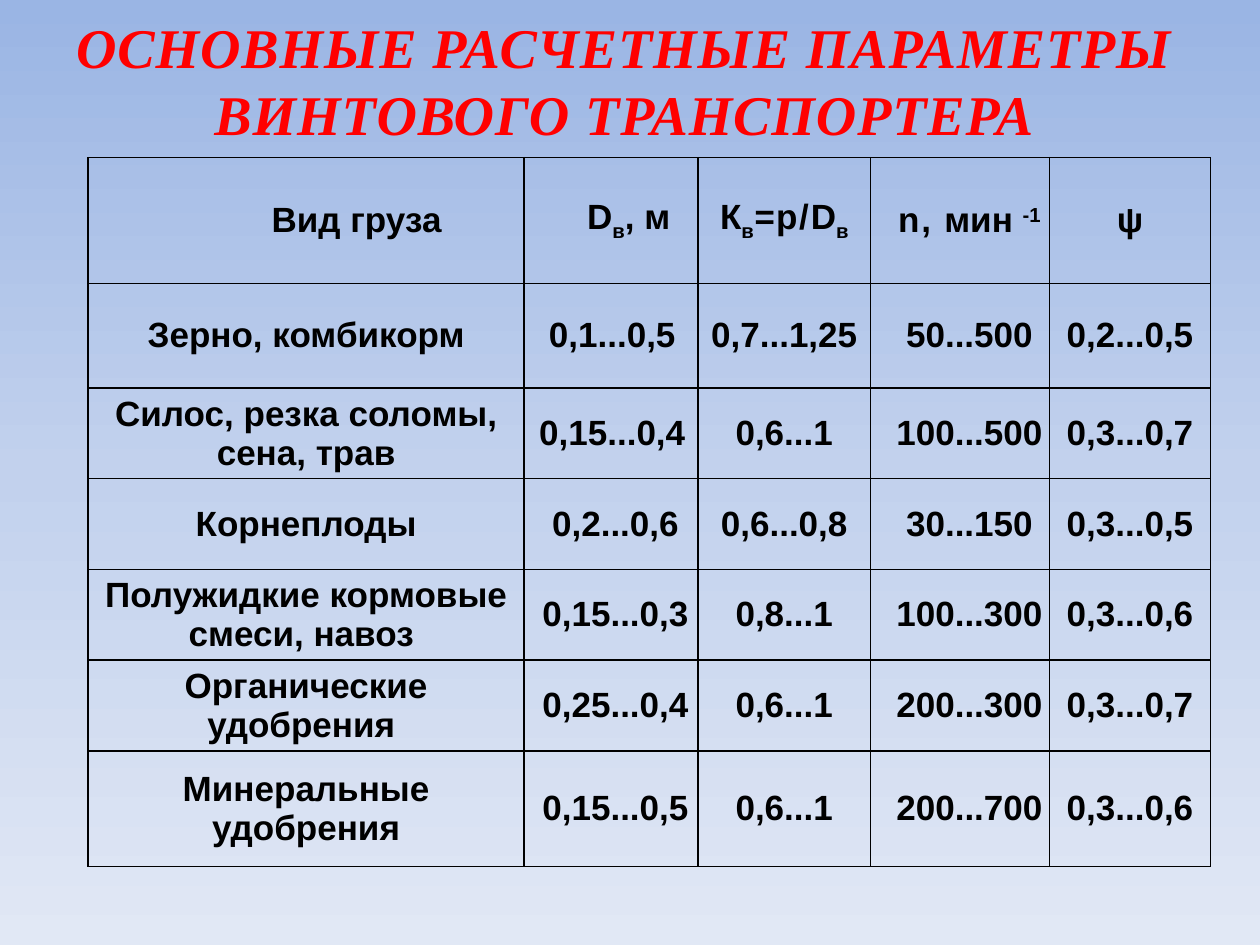
from copy import deepcopy
from dataclasses import dataclass

from lxml.etree import SubElement
from pptx import Presentation
from pptx.dml.color import RGBColor
from pptx.enum.text import MSO_ANCHOR as Anchor, MSO_AUTO_SIZE as AutoSize, PP_ALIGN as Align
from pptx.oxml.ns import qn
from pptx.util import Inches, Pt

RED = RGBColor(0xFF, 0x00, 0x00)
BLACK = RGBColor(0x00, 0x00, 0x00)
SKY = [RGBColor(0x9A, 0xB5, 0xE4), RGBColor(0xC2, 0xD1, 0xED), RGBColor(0xE1, 0xE8, 0xF5)]

TITLE_FORMAT = {"size": Pt(32), "name": "Times New Roman", "bold": True, "italic": True}
CELL_FORMAT = {"size": Pt(20), "name": "Arial", "bold": True}
CELL_MARGINS = {"margin_left": Inches(0.03), "margin_right": Inches(0.03),
                "margin_top": 0, "margin_bottom": 0}

COLUMN_WIDTHS = [3.46, 1.38, 1.37, 1.42, 1.28]
ROW_HEIGHTS = [1, 0.83, 0.72, 0.72, 0.72, 0.72, 0.92]


@dataclass
class Span:
    text: str
    baseline: int = 0  # percent: negative is a subscript
    spacing: float = 0  # points between letters
    italic: bool = False


@dataclass
class Entry:
    spans: list[Span]
    left: float = 0
    first_line: float = 0


@dataclass
class Cargo:
    name: str
    diameter: str
    pitch_ratio: str
    speed: str
    filling: str
    diameter_indent: float = 0.07

    def entries(self) -> list[Entry]:
        return [
            Entry([Span(self.name)]),
            Entry([Span(self.diameter)], first_line=self.diameter_indent),
            Entry([Span(self.pitch_ratio)]),
            Entry([Span(self.speed)], left=0.14, first_line=0.01),
            Entry([Span(self.filling)]),
        ]


HEADER = [
    Entry([Span("Вид груза")], left=0.8),
    Entry([Span("D"), Span("в", -25), Span(", м")], left=0.28),
    Entry([Span("К"), Span("в", -25), Span("=", spacing=1, italic=True),
           Span("р/", spacing=1), Span("D"), Span("в", -25)]),
    Entry([Span("n, ", spacing=1), Span("мин "), Span("-1", 30)], left=0.15),
    Entry([Span("ψ", spacing=1)]),
]
CARGOES = [
    Cargo("Зерно, комбикорм", "0,1...0,5", "0,7...1,25", "50...500", "0,2...0,5", 0.02),
    Cargo("Силос, резка соломы, сена, трав", "0,15...0,4", "0,6...1", "100...500", "0,3...0,7", 0.02),
    Cargo("Корнеплоды", "0,2...0,6", "0,6...0,8", "30...150", "0,3...0,5"),
    Cargo("Полужидкие кормовые смеси, навоз ", "0,15...0,3", "0,8...1", "100...300", "0,3...0,6"),
    Cargo("Органические удобрения ", "0,25...0,4", "0,6...1", "200...300", "0,3...0,7"),
    Cargo("Минеральные удобрения", "0,15...0,5", "0,6...1", "200...700", "0,3...0,6"),
]


def apply(target, values: dict) -> None:
    for name, value in values.items():
        setattr(target, name, value)


def add_span(para, content: Span, font_format: dict, color: RGBColor) -> None:
    span = para.add_run()
    span.text = content.text
    apply(span.font, font_format)
    span.font.color.rgb = color
    properties = span._r.get_or_add_rPr()
    if content.baseline:
        properties.set("baseline", str(content.baseline * 1000))
    if content.spacing:
        properties.set("spc", str(int(content.spacing * 100)))
    if content.italic:
        span.font.italic = True


def paint_background(page) -> None:
    fill = page.background.fill
    fill.gradient()
    fill.gradient_angle = 270
    stops = page.element.find(".//" + qn("a:gsLst"))
    stops.insert(1, deepcopy(stops[0]))
    for stop, color, position in zip(fill.gradient_stops, SKY, (0, 0.5, 1)):
        stop.color.rgb = color
        stop.position = position


def add_title(page, text: str) -> None:
    title = page.shapes.title
    apply(title, {"left": Inches(0.23), "top": Inches(0.16),
                  "width": Inches(9.45), "height": Inches(0.94)})
    apply(title.text_frame, {"word_wrap": True, "auto_size": AutoSize.NONE,
                             "vertical_anchor": Anchor.MIDDLE})
    para = title.text_frame.paragraphs[0]
    para.alignment = Align.CENTER
    add_span(para, Span(text, spacing=0.5), TITLE_FORMAT, RED)


def outline(cell) -> None:
    properties = cell._tc.get_or_add_tcPr()
    for side in ("a:lnL", "a:lnR", "a:lnT", "a:lnB"):
        line = SubElement(properties, qn(side), w=str(Pt(1)))
        SubElement(SubElement(line, qn("a:solidFill")), qn("a:srgbClr"), val=str(BLACK))


def fill_cell(cell, entry: Entry) -> None:
    outline(cell)
    cell.fill.background()
    apply(cell, CELL_MARGINS)
    cell.vertical_anchor = Anchor.MIDDLE
    para = cell.text_frame.paragraphs[0]
    para.alignment = Align.CENTER
    properties = para._p.get_or_add_pPr()
    properties.set("marL", str(Inches(entry.left)))
    properties.set("indent", str(Inches(entry.first_line)))
    for content in entry.spans:
        add_span(para, content, CELL_FORMAT, BLACK)


def add_parameter_table(page) -> None:
    rows = [HEADER] + [cargo.entries() for cargo in CARGOES]
    table = page.shapes.add_table(
        len(rows), len(HEADER), Inches(0.7), Inches(1.25),
        Inches(sum(COLUMN_WIDTHS)), Inches(sum(ROW_HEIGHTS))).table
    apply(table, {"first_row": False, "horz_banding": False})
    for column, width in zip(table.columns, COLUMN_WIDTHS):
        column.width = Inches(width)
    for row, height, entries in zip(table.rows, ROW_HEIGHTS, rows):
        row.height = Inches(height)
        for cell, entry in zip(row.cells, entries):
            fill_cell(cell, entry)


def main() -> None:
    deck = Presentation()
    deck.slide_width, deck.slide_height = Inches(10), Inches(7.5)
    page = deck.slides.add_slide(deck.slide_layouts[5])
    paint_background(page)
    add_title(page, "ОСНОВНЫЕ РАСЧЕТНЫЕ ПАРАМЕТРЫ ВИНТОВОГО ТРАНСПОРТЕРА")
    add_parameter_table(page)
    deck.save("out.pptx")


if __name__ == "__main__":
    main()
